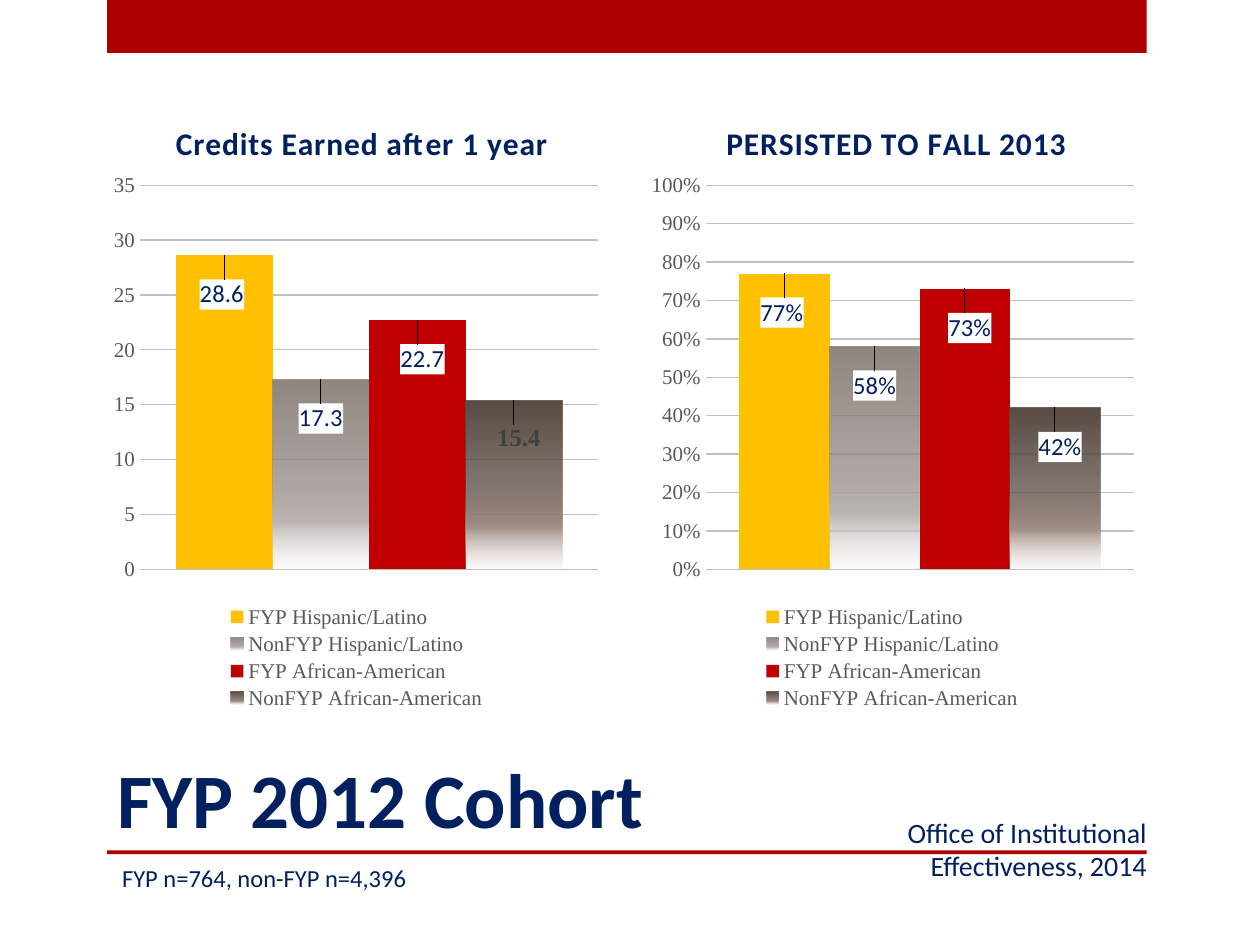
from dataclasses import dataclass
from typing import Optional

from lxml.etree import SubElement
from pptx import Presentation
from pptx.chart.data import CategoryChartData
from pptx.dml.color import RGBColor
from pptx.enum.chart import (XL_CHART_TYPE as ChartType, XL_LABEL_POSITION as LabelPos,
                             XL_LEGEND_POSITION as LegendPos, XL_TICK_MARK as Tick)
from pptx.enum.shapes import MSO_SHAPE as Shape
from pptx.enum.text import MSO_ANCHOR as Anchor, PP_ALIGN as Align
from pptx.oxml import parse_xml
from pptx.oxml.ns import nsdecls, qn
from pptx.util import Inches, Pt

COLORS = {"red": "AD0101", "navy": "002060", "axis": "595959", "grid": "BFBFBF",
          "label": "404040", "white": "FFFFFF", "gold": "FFC000", "crimson": "C00000"}
SANS, SERIF = "Calibri", "Times New Roman"

# Gradient stops: position %, colour, opacity %
LIGHT = [(0, "918782", 100), (51, "918782", 75), (75, "BDB7B4", 100), (100, "E9E7E6", 15)]
DARK = [(0, "5A4C44", 100), (51, "5A4C44", 75), (75, "A49187", 100), (100, "E1DAD7", 15)]
GROUPS = [("FYP Hispanic/Latino", "gold"), ("NonFYP Hispanic/Latino", LIGHT),
          ("FYP African-American", "crimson"), ("NonFYP African-American", DARK)]
LABEL_SHIFTS = [-0.005, 0, 0.01, 0.01]


@dataclass
class ColumnChart:
    title: str
    title_x: float
    left: float
    plot_x: float
    plot_w: float
    values: list[float]
    labels: list[Optional[str]]
    value_format: str
    axis_format: str
    top: float
    step: float


@dataclass
class Note:
    text: str
    box: tuple[float, float, float, float]
    size: int
    align: Align
    wrap: bool


CHARTS = [
    ColumnChart("Credits Earned after 1 year", 0.13, 0.83, 0.07, 0.91,
                [28.6, 17.3, 22.7, 15.4], ["28.6", "17.3", "22.7", None],
                "#,##0.0", "#,##0", 35, 5),
    ColumnChart("PERSISTED TO FALL 2013", 0.16, 5.08, 0.13, 0.85,
                [0.77, 0.58, 0.73, 0.42], ["77%", "58%", "73%", "42%"],
                "0%", "0%", 1, 0.1),
]
NOTES = [
    Note("Office of Institutional Effectiveness, 2014", (6.75, 6.42, 2.45, 0.64),
         16, Align.RIGHT, True),
    Note("FYP n=764, non-FYP n=4,396", (0.87, 6.8, 2.48, 0.34), 14, Align.LEFT, False),
]


def rgb(name: str) -> RGBColor:
    return RGBColor.from_string(COLORS[name])


def style(font, size: float, color: str, name: str = SANS, bold: bool = False) -> None:
    font.size, font.name, font.bold = Pt(size), name, bold
    font.color.rgb = rgb(color)


def add_bar(slide, top: float, height: float) -> None:
    s = slide.shapes.add_shape(Shape.RECTANGLE, Inches(0.85), Inches(top),
                               Inches(8.25), Inches(height))
    s.shadow.inherit = False
    s.fill.solid()
    s.fill.fore_color.rgb = rgb("red")
    s.line.fill.background()


def add_note(slide, note: Note) -> None:
    tf = slide.shapes.add_textbox(*map(Inches, note.box)).text_frame
    tf.word_wrap = note.wrap
    p = tf.paragraphs[0]
    p.alignment = note.align
    r = p.add_run()
    r.text = note.text
    style(r.font, note.size, "navy")


def set_layout(parent, after: Optional[str], inner: bool = False, **place: float) -> None:
    """Give a chart part a manual layout, in fractions of the chart."""
    for old in parent.findall(qn("c:layout")):
        parent.remove(old)
    layout = parse_xml(f"<c:layout {nsdecls('c')}><c:manualLayout/></c:layout>")
    settings = {"layoutTarget": "inner"} if inner else {}
    if after != "c:idx":  # data labels take offsets, other parts take edges
        settings |= {"xMode": "edge", "yMode": "edge"}
    for key, value in (settings | place).items():
        SubElement(layout[0], qn(f"c:{key}")).set("val", str(value))
    if after:
        parent.find(qn(after)).addnext(layout)
    else:
        parent.insert(0, layout)


def fill_gradient(series, stops: list) -> None:
    gs = "".join(f'<a:gs pos="{pos * 1000}"><a:srgbClr val="{color}">'
                 f'<a:alpha val="{alpha * 1000}"/></a:srgbClr></a:gs>'
                 for pos, color, alpha in stops)
    sp_pr = series._element.get_or_add_spPr()
    sp_pr.insert(0, parse_xml(f"<a:gradFill {nsdecls('a')}><a:gsLst>{gs}</a:gsLst>"
                              '<a:lin ang="5400000" scaled="0"/></a:gradFill>'))


def add_label(series, text: Optional[str], number_format: str, shift: float) -> None:
    labels = series.data_labels
    labels.show_value = True
    labels.number_format, labels.number_format_is_linked = number_format, False
    style(labels.font, 14, "label", SERIF)
    label = series.points[0].data_label
    if text:
        r = label.text_frame.paragraphs[0].add_run()
        r.text = text
        style(r.font, 14, "navy")
    else:
        style(label.font, 14, "label", SERIF, True)
    label.position = LabelPos.INSIDE_END
    d_lbl = labels._element.find(qn("c:dLbl"))
    set_layout(d_lbl, "c:idx", x=shift, y=0.03)
    before = d_lbl.find(qn("c:tx")) if text else d_lbl.find(qn("c:layout"))
    before.addnext(parse_xml(
        f"<c:spPr {nsdecls('c', 'a')}><a:solidFill>"
        f'<a:srgbClr val="{COLORS["white"]}"/></a:solidFill></c:spPr>'))


def add_column_chart(slide, spec: ColumnChart) -> None:
    data = CategoryChartData(number_format=spec.value_format)
    data.categories = ["1"]
    for (name, _), value in zip(GROUPS, spec.values):
        data.add_series(name, [value])
    chart = slide.shapes.add_chart(ChartType.COLUMN_CLUSTERED, Inches(spec.left),
                                   Inches(0.67), Inches(4), Inches(5), data).chart
    chart.font.size, chart.font.name = Pt(10), SERIF

    # Title
    r = chart.chart_title.text_frame.paragraphs[0].add_run()
    r.text = spec.title
    style(r.font, 18, "navy", bold=True)
    r._r.get_or_add_rPr().set("spc", "50")
    set_layout(chart.chart_title._element, "c:tx", x=spec.title_x, y=0.05)

    # Axes
    chart.category_axis.visible = False
    axis = chart.value_axis
    axis.minimum_scale, axis.maximum_scale, axis.major_unit = 0, spec.top, spec.step
    axis.major_tick_mark = axis.minor_tick_mark = Tick.NONE
    axis.tick_labels.number_format = spec.axis_format
    axis.tick_labels.number_format_is_linked = False
    style(axis.tick_labels.font, 12, "axis", SERIF)
    axis.format.line.fill.background()
    axis.major_gridlines.format.line.color.rgb = rgb("grid")
    axis.major_gridlines.format.line.width = Pt(0.75)

    # Columns
    plot = chart.plots[0]
    plot.gap_width, plot.overlap, plot.vary_by_categories = 75, 0, False
    set_layout(chart._chartSpace.chart.plotArea, None, True,
               x=spec.plot_x, y=0.16, w=spec.plot_w, h=0.61)
    for series, (_, fill), text, shift in zip(plot.series, GROUPS, spec.labels, LABEL_SHIFTS):
        if isinstance(fill, str):
            series.format.fill.solid()
            series.format.fill.fore_color.rgb = rgb(fill)
        else:
            fill_gradient(series, fill)
        add_label(series, text, spec.value_format, shift)

    # Legend
    chart.has_legend = True
    chart.legend.position, chart.legend.include_in_layout = LegendPos.BOTTOM, False
    style(chart.legend.font, 12, "axis", SERIF)
    set_layout(chart.legend._element, "c:legendPos", x=0.24, y=0.82, w=0.52, h=0.18)


def main() -> None:
    prs = Presentation()
    prs.slide_width, prs.slide_height = Inches(10), Inches(7.5)
    slide = prs.slides.add_slide(prs.slide_layouts[5])

    # Red bars
    add_bar(slide, 0, 0.42)
    add_bar(slide, 6.75, 0.03)

    # Title
    title = slide.shapes.title
    title.left, title.top, title.width, title.height = map(Inches, (0.83, 5.83, 7.42, 0.92))
    tf = title.text_frame
    tf.vertical_anchor = Anchor.BOTTOM
    p = tf.paragraphs[0]
    p.alignment = Align.LEFT
    r = p.add_run()
    r.text = "FYP 2012 Cohort"
    style(r.font, 44, "navy", bold=True)

    # Notes and charts
    for note in NOTES:
        add_note(slide, note)
    for spec in CHARTS:
        add_column_chart(slide, spec)
    prs.save("out.pptx")


if __name__ == "__main__":
    main()
